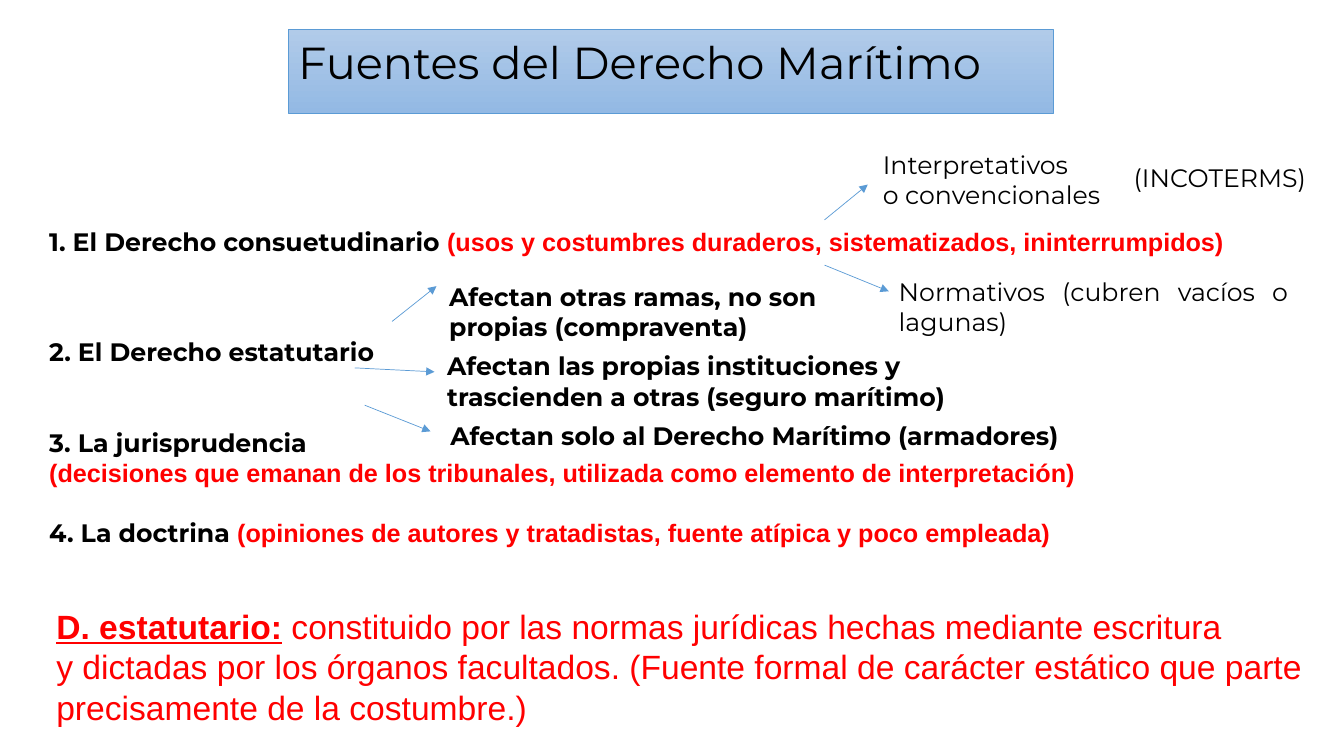
from pptx import Presentation
from pptx.dml.color import RGBColor
from pptx.enum.shapes import MSO_CONNECTOR
from pptx.enum.text import MSO_ANCHOR, MSO_AUTO_SIZE, PP_ALIGN
from pptx.oxml.ns import qn
from pptx.util import Cm, Pt
from lxml import etree

STRAIGHT = MSO_CONNECTOR.STRAIGHT
TOP = MSO_ANCHOR.TOP
GROW = MSO_AUTO_SIZE.SHAPE_TO_FIT_TEXT
LEFT, JUSTIFY = PP_ALIGN.LEFT, PP_ALIGN.JUSTIFY

BLACK, RED = RGBColor(0, 0, 0), RGBColor(0xFF, 0, 0)
THEME = {
    "accent": RGBColor(0x5B, 0x9B, 0xD5),
    "gradient": (RGBColor(0xB1, 0xCB, 0xE9), RGBColor(0x93, 0xB9, 0xE4)),
    "hairline": Pt(0.5),
    "title": ({"name": "Montserrat", "size": Pt(32), "bold": False}, BLACK),
    "plain": ({"name": "Montserrat", "size": Pt(18), "bold": False}, BLACK),
    "strong": ({"name": "Montserrat", "size": Pt(18), "bold": True}, BLACK),
    "remark": ({"name": "Arial", "size": Pt(18), "bold": True}, RED),
    "term": ({"name": "Arial", "size": Pt(24), "bold": True, "underline": True}, RED),
    "space": ({"name": "Arial", "size": Pt(24), "bold": True}, RED),
    "definition": ({"name": "Arial", "size": Pt(24), "bold": False}, RED),
}
LINE_HEIGHT, TWO_LINES = 1.02, 1.8


def write(frame, paragraphs, align=LEFT):
    """Fill a text frame with paragraphs given as lists of (text, style) runs."""
    layout = {"word_wrap": True, "auto_size": GROW, "vertical_anchor": TOP}
    for key, value in layout.items():
        setattr(frame, key, value)
    for index, runs in enumerate(paragraphs):
        paragraph = frame.add_paragraph() if index else frame.paragraphs[0]
        paragraph.alignment = align
        for text, style in runs:
            run = paragraph.add_run()
            run.text = text
            values, colour = THEME[style]
            for key, value in values.items():
                setattr(run.font, key, value)
            run.font.color.rgb = colour


def add_text(slide, box, paragraphs, align=LEFT):
    """Place a text box at left, top, width and height in centimetres."""
    write(slide.shapes.add_textbox(*map(Cm, box)).text_frame, paragraphs, align)


def add_arrow(slide, origin, start, end):
    """Draw a thin arrow between two points measured from the origin."""
    points = [Cm(base + offset) for point in (start, end)
              for base, offset in zip(origin, point)]
    arrow = slide.shapes.add_connector(STRAIGHT, *points)
    arrow.line.color.rgb = THEME["accent"]
    arrow.line.width = THEME["hairline"]
    etree.SubElement(arrow.line._get_or_add_ln(), qn("a:tailEnd"), type="triangle")
    etree.SubElement(arrow._element.spPr, qn("a:effectLst"))


def add_title(slide, box):
    """Format the title placeholder as a gradient banner."""
    title = slide.shapes.title
    for key, value in zip(("left", "top", "width", "height"), box):
        setattr(title, key, Cm(value))
    title.fill.gradient()
    title.fill.gradient_angle = 270
    for stop, colour, position in zip(title.fill.gradient_stops, THEME["gradient"], (0, 1)):
        stop.color.rgb = colour
        stop.position = position
    title.line.color.rgb = THEME["accent"]
    title.line.width = THEME["hairline"]
    write(title.text_frame, [[("Fuentes del Derecho Marítimo", "title")]])


def add_customary_law(slide, left, top):
    """Place the customary law heading with its two kinds of usage."""
    add_text(slide, (left, top + 1.96, 31.04, LINE_HEIGHT), [[
        ("1. El Derecho consuetudinario ", "strong"),
        ("(usos y costumbres duraderos, sistematizados, ininterrumpidos)", "remark")]])
    add_arrow(slide, (left, top), (19.79, 1.91), (20.88, 1.02))
    add_arrow(slide, (left, top), (19.79, 3.05), (21.41, 3.71))
    add_text(slide, (left + 21.01, top, 6.6, TWO_LINES),
             [[("Interpretativos", "plain")], [("o convencionales", "plain")]])
    add_text(slide, (left + 21.41, top + 3.2, 10.31, TWO_LINES),
             [[("Normativos (cubren vacíos o lagunas)", "plain")]], JUSTIFY)
    add_text(slide, (left + 27.33, top + 0.33, 5.31, LINE_HEIGHT),
             [[("(INCOTERMS)", "plain")]])


def add_statutory_law(slide, left, top):
    """Place the statutory law heading with arrows to its three scopes."""
    add_text(slide, (left, top + 1.4, 9.27, LINE_HEIGHT),
             [[("2. El Derecho estatutario", "strong")]])
    scopes = (
        ("Afectan otras ramas, no son propias (compraventa)",
         10.08, 11.23, TWO_LINES, (8.89, 1.14), (10.01, 0.25)),
        ("Afectan las propias instituciones y trascienden a otras (seguro marítimo)",
         10.03, 14.86, TWO_LINES, (7.95, 2.31), (9.96, 2.41)),
        ("Afectan solo al Derecho Marítimo (armadores)",
         10.11, 19.56, LINE_HEIGHT, (8.2, 3.25), (9.86, 3.91)),
    )
    for index, (scope, indent, width, height, start, end) in enumerate(scopes):
        add_arrow(slide, (left, top), start, end)
        add_text(slide, (left + indent, top + index * 1.75, width, height),
                 [[(scope, "strong")]])


def add_case_law_and_doctrine(slide, left, top):
    """Place the headings for case law and legal doctrine."""
    add_text(slide, (left, top, 26.62, TWO_LINES), [
        [("3. La jurisprudencia", "strong")],
        [("(decisiones que emanan de los tribunales, utilizada como elemento "
          "de interpretación)", "remark")]])
    add_text(slide, (left, top + 2.26, 26.26, LINE_HEIGHT), [[
        ("4. La doctrina ", "strong"),
        ("(opiniones de autores y tratadistas, fuente atípica y poco empleada)", "remark")]])


def add_definition(slide, box):
    """Place the definition of statutory law."""
    add_text(slide, box, [
        [("D. estatutario:", "term"), (" ", "space"),
         ("constituido por las normas jurídicas hechas mediante escritura", "definition")],
        [("y dictadas por los órganos facultados. (Fuente formal de carácter "
          "estático que parte", "definition")],
        [("precisamente de la costumbre.)", "definition")]])


def main():
    """Build and save the presentation."""
    deck = Presentation()
    deck.slide_width, deck.slide_height = Cm(33.87), Cm(19.05)
    slide = deck.slides.add_slide(deck.slide_layouts.get_by_name("Title Only"))
    margin = 0.99
    add_title(slide, (7.26, 0.74, 19.28, 1.63))
    add_customary_law(slide, margin, 3.63)
    add_statutory_law(slide, margin, 6.96)
    add_case_law_and_doctrine(slide, margin, 10.64)
    add_definition(slide, (1.17, 15.14, 32.46, 3.33))
    deck.save("out.pptx")


if __name__ == "__main__":
    main()
